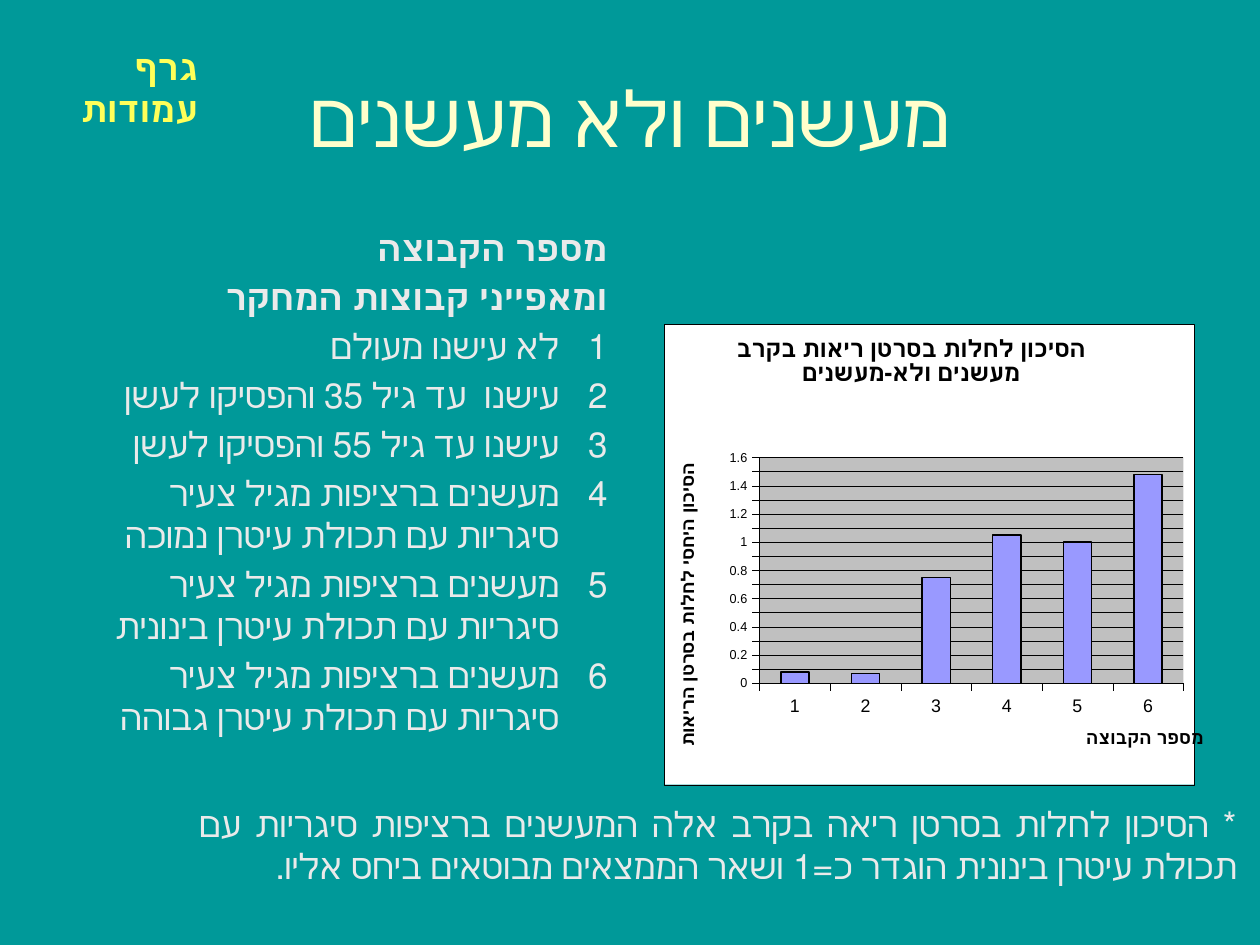
"""Build a slide with a column chart of lung cancer risk by smoking group."""
from dataclasses import dataclass

from lxml import etree
from pptx import Presentation
from pptx import util as u
from pptx.chart import data
from pptx.dml import color
from pptx.enum import chart as ch
from pptx.enum import text as t
from pptx.oxml import ns

WIDE, HIGH = u.Inches(10), u.Inches(7.5)
COLS, ROWS = 100, 75


@dataclass(frozen=True)
class Theme:
    back: str = "009999"
    head: str = "FFFFCC"
    body: str = "EAEAEA"
    tag: str = "FFFF59"
    ink: str = "000000"
    paper: str = "FFFFFF"
    plot: str = "C0C0C0"
    bar: str = "9999FF"
    font: str = "Arial"
    tagfont: str = "DejaVu Sans"
    big: float = 44
    mid: float = 20
    title: float = 13.6
    axis: float = 10.4
    tick: float = 7.4
    hair: float = 0.22
    edge: float = 0.87


@dataclass(frozen=True)
class Box:
    col: float
    row: float
    cols: float
    rows: float

    def place(self) -> list[int]:
        return [int(n) for n in (self.col * WIDE / COLS, self.row * HIGH / ROWS,
                                 self.cols * WIDE / COLS, self.rows * HIGH / ROWS)]


@dataclass(frozen=True)
class Block:
    box: Box
    lines: tuple[str, ...]
    size: float
    tint: str
    font: str = Theme.font
    align: t.PP_ALIGN = t.PP_ALIGN.RIGHT
    anchor: t.MSO_ANCHOR = t.MSO_ANCHOR.TOP
    bold: int = 0
    hang: float = 0
    gap: float = 0


THEME = Theme()
BLOCKS = (
    Block(Box(5, 3, 90, 12.5), ("מעשנים ולא מעשנים",), THEME.big, THEME.head,
          align=t.PP_ALIGN.CENTER, anchor=t.MSO_ANCHOR.MIDDLE),
    Block(Box(5, 17.5, 44.2, 49.5), (
        "מספר הקבוצה",
        "ומאפייני קבוצות המחקר",
        "לא עישנו מעולם",
        "עישנו  עד גיל 35 והפסיקו לעשן",
        "עישנו עד גיל 55 והפסיקו לעשן",
        "מעשנים ברציפות מגיל צעיר סיגריות עם תכולת עיטרן נמוכה",
        "מעשנים ברציפות מגיל צעיר סיגריות עם תכולת עיטרן בינונית",
        "מעשנים ברציפות מגיל צעיר סיגריות עם תכולת עיטרן גבוהה",
    ), THEME.mid, THEME.body, bold=2, hang=0.38, gap=4),
    Block(Box(14.8, 63.2, 84.4, 7.7), (
        "* הסיכון לחלות בסרטן ריאה בקרב אלה המעשנים ברציפות סיגריות עם תכולת "
        "עיטרן בינונית הוגדר כ=1 ושאר הממצאים מבוטאים ביחס אליו.",
    ), THEME.mid, THEME.body, align=t.PP_ALIGN.JUSTIFY, anchor=t.MSO_ANCHOR.MIDDLE),
    Block(Box(3.7, 3.1, 13, 7.7), ("גרף עמודות",), THEME.mid, THEME.tag,
          font=THEME.tagfont, bold=1),
)
CHART = Box(52.7, 25.7, 43.1, 36.6)
RISKS = (0.08, 0.07, 0.75, 1.05, 1, 1.48)


def rgb(tint: str) -> color.RGBColor:
    return color.RGBColor.from_string(tint)


def style(font, size: float, tint: str, bold: bool, name: str = THEME.font) -> None:
    font.size, font.bold, font.name = u.Pt(size), bold, name
    font.color.rgb = rgb(tint)


def write(slide, block: Block) -> None:
    frame = slide.shapes.add_textbox(*block.box.place()).text_frame
    frame.text = "\n".join(block.lines)
    frame.word_wrap, frame.vertical_anchor = True, block.anchor
    for spot, para in enumerate(frame.paragraphs):
        para.alignment, para.space_before = block.align, u.Pt(block.gap)
        props = para._p.get_or_add_pPr()
        props.set("rtl", "1")
        if block.hang and spot >= block.bold:
            props.set("marL", str(u.Inches(block.hang)))
            props.set("indent", str(u.Inches(-block.hang)))
            etree.SubElement(props, ns.qn("a:buFont"), typeface=block.font)
            etree.SubElement(props, ns.qn("a:buAutoNum"), type="arabicPlain")
        for run in para.runs:
            style(run.font, block.size, block.tint, spot < block.bold, block.font)


def layout(**parts) -> etree._Element:
    root = etree.Element(ns.qn("c:layout"))
    hold = etree.SubElement(root, ns.qn("c:manualLayout"))
    for tag, value in parts.items():
        etree.SubElement(hold, ns.qn("c:" + tag), val=str(value))
    return root


def label(owner, tag: str, words: str, size: float, x: float, y: float) -> None:
    title = getattr(owner, tag)
    title.text_frame.text = words
    for para in title.text_frame.paragraphs:
        para._p.get_or_add_pPr().set("rtl", "1")
        for run in para.runs:
            style(run.font, size, THEME.ink, True)
    for old in title._element.findall(ns.qn("c:layout")):
        title._element.remove(old)
    title._element.find(ns.qn("c:tx")).addnext(
        layout(xMode="edge", yMode="edge", x=x, y=y))


def fill(tint: str, line: bool) -> etree._Element:
    root = etree.Element(ns.qn("c:spPr"))
    spots = [root]
    if line:
        spots.append(etree.Element(ns.qn("a:ln"), w=str(u.Pt(THEME.hair))))
    for spot, hue in zip(spots, (tint, THEME.ink)):
        solid = etree.SubElement(spot, ns.qn("a:solidFill"))
        etree.SubElement(solid, ns.qn("a:srgbClr"), val=hue)
    root.extend(spots[1:])
    return root


def stroke(line, width: float) -> None:
    line.color.rgb, line.width = rgb(THEME.ink), u.Pt(width)


def graph(slide) -> None:
    feed = data.CategoryChartData()
    feed.categories = [str(n + 1) for n in range(len(RISKS))]
    feed.add_series("Series 1", RISKS)
    chart = slide.shapes.add_chart(
        ch.XL_CHART_TYPE.COLUMN_CLUSTERED, *CHART.place(), feed).chart
    chart.has_legend = False
    style(chart.font, THEME.axis, THEME.ink, False)
    cat, val = chart.category_axis, chart.value_axis
    label(chart, "chart_title", "הסיכון לחלות בסרטן ריאות בקרב\nמעשנים ולא-מעשנים",
          THEME.title, 0.13, 0.02)
    label(cat, "axis_title", "מספר הקבוצה", THEME.axis, 0.79, 0.87)
    label(val, "axis_title", "הסיכון היחסי לחלות בסרטן הריאות", THEME.axis, 0.02, 0.28)
    for axis, size in ((cat, THEME.axis), (val, THEME.tick)):
        style(axis.tick_labels.font, size, THEME.ink, False)
        axis.major_tick_mark = ch.XL_TICK_MARK.OUTSIDE
        stroke(axis.format.line, THEME.hair)
    val.minimum_scale, val.maximum_scale, val.major_unit = 0, 1.6, 0.1
    stroke(val.major_gridlines.format.line, THEME.hair)
    plot = chart.plots[0]
    plot.gap_width, plot.vary_by_categories = 150, False
    bars = plot.series[0].format
    bars.fill.solid()
    bars.fill.fore_color.rgb = rgb(THEME.bar)
    stroke(bars.line, THEME.edge)
    root = chart._chartSpace
    area = root.chart.plotArea
    for old in area.findall(ns.qn("c:layout")):
        area.remove(old)
    area.insert(0, layout(layoutTarget="inner", xMode="edge", yMode="edge",
                          x=0.18, y=0.29, w=0.8, h=0.49))
    area.append(fill(THEME.plot, False))
    root.chart.addnext(fill(THEME.paper, True))


def main() -> None:
    deck = Presentation()
    deck.slide_width, deck.slide_height = WIDE, HIGH
    slide = deck.slides.add_slide(deck.slide_layouts[6])
    slide.background.fill.solid()
    slide.background.fill.fore_color.rgb = rgb(THEME.back)
    graph(slide)
    for block in BLOCKS:
        write(slide, block)
    deck.save("out.pptx")


if __name__ == "__main__":
    main()
